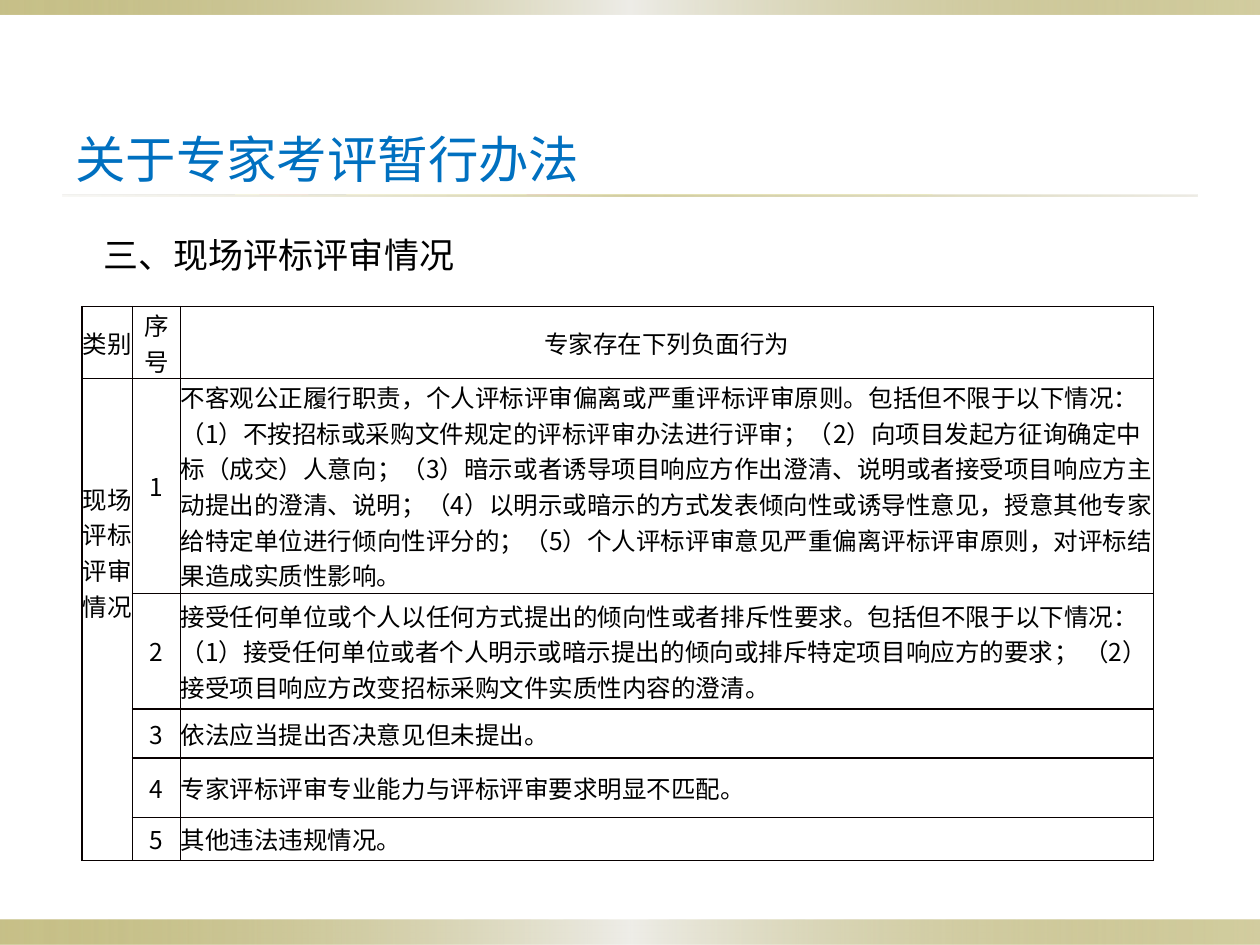
from itertools import cycle

from lxml import etree
from pptx import Presentation
from pptx.dml.color import RGBColor
from pptx.enum.shapes import MSO_SHAPE
from pptx.enum.text import MSO_ANCHOR, PP_ALIGN
from pptx.oxml.ns import qn
from pptx.util import Cm, Pt

RECTANGLE = MSO_SHAPE.RECTANGLE
TOP, MIDDLE, BOTTOM = MSO_ANCHOR.TOP, MSO_ANCHOR.MIDDLE, MSO_ANCHOR.BOTTOM
LEFT, CENTER = PP_ALIGN.LEFT, PP_ALIGN.CENTER

COLORS = {
    "title": "0070C0",
    "text": "000000",
    "border": "080000",
    "behaviour_border": "000000",
    "olive": "918415",
    "pale": "EEEDE8",
    "sand": "DCD9CC",
}
SERIF, SANS, TITLE_FONT = "Times New Roman", "Noto Sans CJK SC", "Karla"


def add_text(frame, text, size=14, fonts=(SANS,), color="text", align=LEFT):
    """Write one paragraph; a list of pieces takes the fonts in turn."""
    paragraph = frame.paragraphs[0]
    paragraph.alignment = align
    pieces = [text] if isinstance(text, str) else text
    for piece, font_name in zip(pieces, cycle(fonts)):
        run = paragraph.add_run()
        run.text = piece
        run.font.size = Pt(size)
        run.font.bold = False
        run.font.name = font_name
        run.font.color.rgb = RGBColor.from_string(COLORS[color])
        east_asian = etree.SubElement(run.font._element, qn("a:ea"))
        east_asian.set("typeface", SANS)


def add_solid(parent, color, opacity=100):
    """Append an RGB colour with its opacity in percent."""
    rgb = etree.SubElement(parent, qn("a:srgbClr"), val=COLORS[color])
    if opacity < 100:
        etree.SubElement(rgb, qn("a:alpha"), val=str(opacity * 1000))


prs = Presentation()
prs.slide_width, prs.slide_height = Cm(25.4), Cm(19.05)
slide = prs.slides.add_slide(prs.slide_layouts[6])

# Gradient bands at the edges and the rule under the title
edge_stops = [("olive", 50), ("pale", 100), ("olive", 40)]
rule_stops = [("sand", 20), ("olive", 40), ("sand", 50)]
bands = [
    (0, 18.55, 25.4, 0.5, edge_stops),
    (0, 0, 25.4, 0.3, edge_stops),
    (1.27, 3.92, 22.86, 0.05, rule_stops),
]
for left, top, width, height, stops in bands:
    band = slide.shapes.add_shape(RECTANGLE, Cm(left), Cm(top), Cm(width), Cm(height))
    band.shadow.inherit = False
    band.line.fill.background()
    band.fill.gradient()
    band.fill.gradient_angle = 0
    stop_list = band._element.spPr.find(qn("a:gradFill")).find(qn("a:gsLst"))
    for old_stop in list(stop_list):
        stop_list.remove(old_stop)
    for index, (color, opacity) in enumerate(stops):
        stop = etree.SubElement(stop_list, qn("a:gs"), pos=str(index * 50000))
        add_solid(stop, color, opacity)

# Title and section heading
headings = [
    ("关于专家考评暂行办法", 0.76, 3.18, 0.25, 0, 0.14, BOTTOM, 28.8, "title"),
    ("三、现场评标评审情况", 4.45, 13, 0.82, 0.26, 0, TOP, 20, "text"),
]
for text, top, height, indent, above, below, anchor, size, color in headings:
    heading = slide.shapes.add_textbox(Cm(1.27), Cm(top), Cm(22.86), Cm(height))
    frame = heading.text_frame
    frame.word_wrap = True
    frame.vertical_anchor = anchor
    frame.margin_left, frame.margin_top, frame.margin_bottom = Cm(indent), Cm(above), Cm(below)
    add_text(frame, text, size=size, fonts=(TITLE_FONT,), color=color)

# Table of negative behaviours; pieces alternate between the two fonts
behaviours = [
    [
        "不客观公正履行职责，个人评标评审偏离",
        "或严重",
        "评标评审原则。",
        "包括但不限于以下情况：（1）不按招标或采购文件规定的评标评审办法进行评审；（2）",
        "向项目发起方征询确定中标（成交）人意向",
        "；（3）",
        "暗示或者诱导项目响应方作出澄清、说明或者接受项目响应方主动提出的澄清、说明",
        "；（4）",
        "以明示或暗示的方式发表倾向性或诱导性意见，授意其他专家给特定单位",
        "进行倾向性评分",
        "的",
        "；（5）",
        "个人评标评审意见严重偏离评标评审原则，对评标结果造成实质性影响。",
    ],
    [
        "接受任何单位或个人以任何方式提出的倾向性或者排斥性要求。包括但不限于以下情况：（1）",
        "接受任何单位或者个人明示或暗示提出的倾向或排斥特定项目响应方的要求",
        "； （2）接受项目响应方改变招标采购文件实质性内容的澄清。",
    ],
    "依法应当提出否决意见但未提出。",
    "专家评标评审专业能力与评标评审要求明显不匹配。",
    "其他违法违规情况。",
]
column_widths = [1.02, 0.97, 19.61]
row_heights = [1.45, 4.33, 2.33, 0.99, 1.2, 0.87]
table = slide.shapes.add_table(
    len(row_heights), len(column_widths), Cm(1.65), Cm(6.18),
    Cm(sum(column_widths)), Cm(sum(row_heights)),
).table
table.first_row = table.horz_banding = False
for column, width in zip(table.columns, column_widths):
    column.width = Cm(width)
for row, height in zip(table.rows, row_heights):
    row.height = Cm(height)

# Cell borders, insets and empty fills
for row in table.rows:
    for column_index, cell in enumerate(row.cells):
        cell.vertical_anchor = MIDDLE
        cell.margin_left = cell.margin_right = cell.margin_top = cell.margin_bottom = 0
        properties = cell._tc.get_or_add_tcPr()
        for side in ("lnL", "lnR", "lnT", "lnB"):
            thin = column_index == 2 and side in ("lnL", "lnR")
            border = etree.SubElement(properties, qn(f"a:{side}"))
            border.set("w", str(Pt(0.75 if thin else 1)))
            solid = etree.SubElement(border, qn("a:solidFill"))
            add_solid(solid, "behaviour_border" if thin else "border")
        cell.fill.background()

# Header row
header = [("类别", SERIF), ("序号", SERIF), ("专家存在下列负面行为", SANS)]
for column_index, (label, font_name) in enumerate(header):
    add_text(table.cell(0, column_index).text_frame, label, fonts=(font_name,), align=CENTER)

# Category spanning all behaviours, raised above the middle
category = table.cell(1, 0)
category.merge(table.cell(len(behaviours), 0))
category.margin_bottom = Cm(2.72)
add_text(category.text_frame, "现场评标评审情况", align=CENTER)

# Numbered behaviours
for number, behaviour in enumerate(behaviours, start=1):
    fonts = (SERIF, SANS) if number == 1 else (SANS, SERIF)
    add_text(table.cell(number, 1).text_frame, str(number), align=CENTER)
    add_text(table.cell(number, 2).text_frame, behaviour, fonts=fonts)

prs.save("out.pptx")
